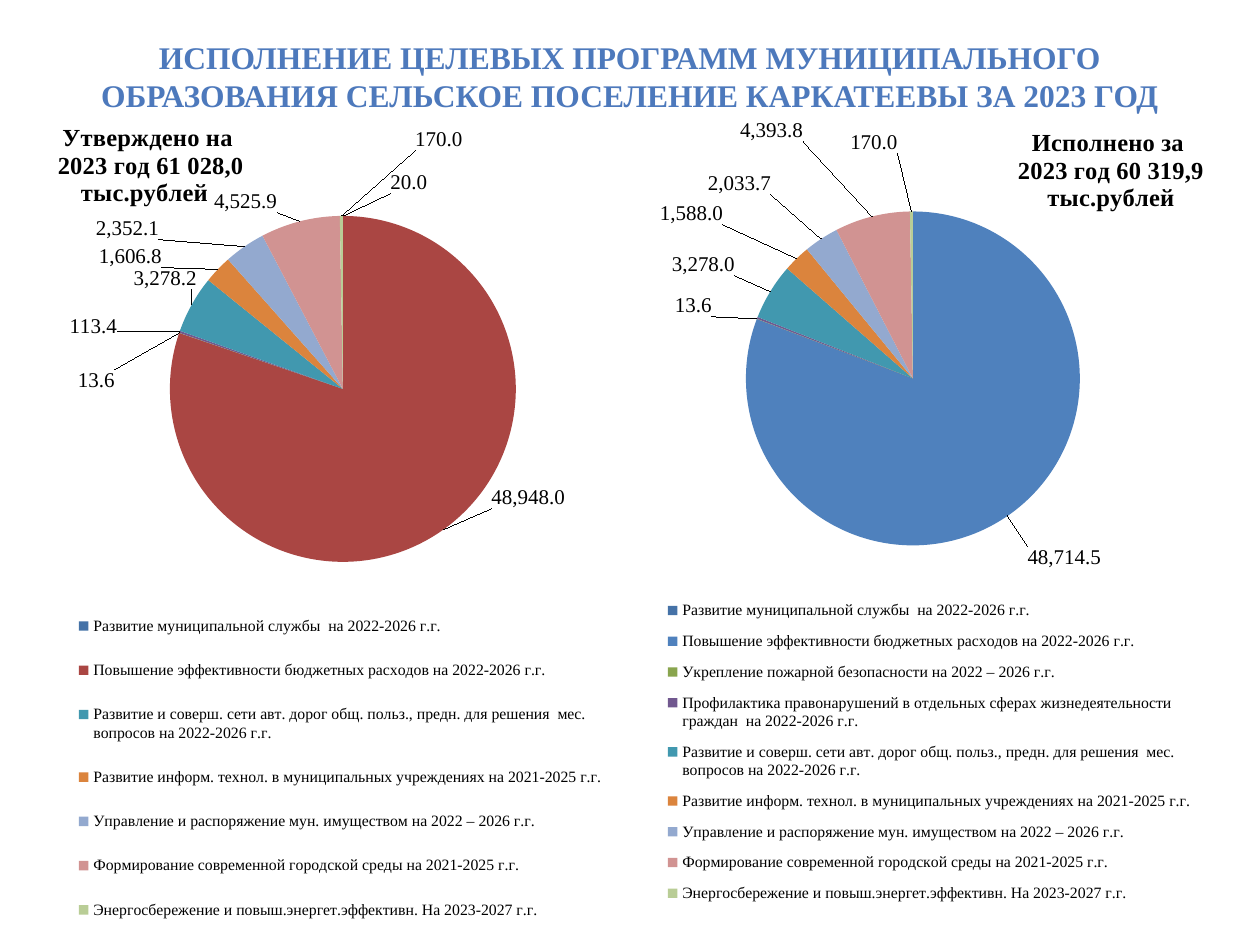
import math
from pptx import Presentation, util as u
from pptx.chart.data import CategoryChartData
from pptx.dml.color import RGBColor
from pptx.enum import chart as ch, text
from pptx.oxml import parse_xml
from pptx.oxml.ns import nsdecls, qn

PX = 914400 // 126
FONT = "Times New Roman"
LABEL_GAP = 7
CATEGORIES = [
    "Развитие муниципальной службы  на 2022-2026 г.г.",
    "Повышение эффективности бюджетных расходов на 2022-2026 г.г.",
    "Укрепление пожарной безопасности на 2022 – 2026 г.г.",
    "Профилактика правонарушений в отдельных сферах жизнедеятельности граждан  на 2022-2026 г.г.",
    "Развитие и соверш. сети авт. дорог общ. польз., предн. для решения  мес. вопросов на 2022-2026 г.г.",
    "Развитие информ. технол. в муниципальных учреждениях на 2021-2025 г.г.",
    "Управление и распоряжение мун. имуществом на 2022 – 2026 г.г.",
    "Формирование современной городской среды на 2021-2025 г.г.",
    "Энергосбережение и повыш.энергет.эффективн. На 2023-2027 г.г.",
]
COLOURS = ["4572A7", "AA4643", "89A54E", "71588F", "4198AF",
           "DB843D", "93A9CF", "D19392", "B9CD96"]

# Boxes are left, top, width, height in px; label centres are x, y in px
APPROVED = dict(
    box=(44, 98, 601, 847), plot=(162, 216, 362, 346), legend=(60, 591, 560, 354),
    title_at=(54, 118), title=["Утверждено на ", "2023 год 61 028,0", "тыс.рублей  "],
    values=[20, 48948, 13.6, 113.4, 3278.2, 1606.8, 2352.1, 4525.9, 170],
    centres=[(409, 182), (528, 498), (97, 380), (94, 326), (166, 278),
             (131, 256), (128, 228), (246, 201), (439, 139)],
    colours=COLOURS, hidden_entries=[2, 3])
EXECUTED = dict(
    box=(633, 88, 595, 837), plot=(746, 209, 334, 339), legend=(649, 589, 560, 326),
    title_at=(1008, 123), title=["Исполнено за", " 2023 год 60 319,9", " тыс.рублей"],
    values=[20, 48714.5, 13.6, 108.4, 3278, 1588, 2033.7, 4393.8, 170],
    centres=[None, (1064, 558), (694, 305), None, (704, 264),
             (692, 213), (740, 183), (772, 130), (874, 142)],
    colours=[COLOURS[0], "4F81BD"] + COLOURS[2:], hidden_entries=[])


def rgb(value):
    return RGBColor.from_string(value)


def style(font, size, colour="000000", bold=False):
    font.name, font.size, font.bold = FONT, u.Pt(size), bold
    font.color.rgb = rgb(colour)


def set_layout(parent, after, x, y, w=None, h=None, edge=True, inner=False):
    """Place a chart part by fractions of the chart, after the named child."""
    for old in parent.findall(qn("c:layout")):
        parent.remove(old)
    parts = ['<c:layoutTarget val="inner"/>'] if inner else []
    if edge:
        parts += ['<c:xMode val="edge"/><c:yMode val="edge"/>']
    for tag, value in zip("xywh", (x, y, w, h)):
        if value is not None:
            parts.append(f'<c:{tag} val="{value:.4f}"/>')
    layout = parse_xml(f'<c:layout {nsdecls("c")}><c:manualLayout>'
                       f'{"".join(parts)}</c:manualLayout></c:layout>')
    if after:
        parent.findall(qn(after))[-1].addnext(layout)
    else:
        parent.insert(0, layout)


def fractions(area, box):
    x, y, w, h = box
    return [(area[0] - x) / w, (area[1] - y) / h] + [
        size / whole for size, whole in zip(area[2:], (w, h))]


def default_centre(plot, values, i):
    """Centre of a label just outside the pie at the middle of its slice."""
    x, y, w, h = plot
    radius = min(w, h) / 2 + LABEL_GAP
    turn = 2 * math.pi * (sum(values[:i]) + values[i] / 2) / sum(values)
    dx, dy = math.sin(turn), -math.cos(turn)
    shown = f"{values[i]:,.1f}"
    width = sum(5 if c in ",." else 10.5 for c in shown)
    near_axis = math.sin(math.radians(5))
    side = 0 if abs(dx) <= near_axis else math.copysign(1, dx)
    rise = 0 if abs(dy) <= near_axis else math.copysign(1, dy)
    return (x + w / 2 + radius * dx + side * width / 2,
            y + h / 2 + radius * dy + rise * 12)


def add_labels(series, d):
    labels = series.data_labels
    labels.show_value = True
    labels.number_format, labels.number_format_is_linked = "#,##0.0", False
    labels.position = ch.XL_LABEL_POSITION.OUTSIDE_END
    style(labels.font, 12)
    for i, centre in enumerate(d["centres"]):
        label = series.points[i].data_label
        label.position = ch.XL_LABEL_POSITION.OUTSIDE_END
        element = labels._element.xpath(f'c:dLbl[c:idx/@val="{i}"]')[0]
        if centre is None:
            for child in list(element)[1:]:
                element.remove(child)
            element.append(parse_xml(f'<c:delete {nsdecls("c")} val="1"/>'))
            continue
        style(label.font, 12)
        start = default_centre(d["plot"], d["values"], i)
        offset = [(c - s) / size for c, s, size in zip(centre, start, d["box"][2:])]
        set_layout(element, "c:idx", *offset, edge=False)
        element.find(qn("c:layout")).addnext(parse_xml(
            f'<c:numFmt {nsdecls("c")} formatCode="#,##0.0" sourceLinked="0"/>'))


def add_chart_title(chart, d):
    chart.has_title = True
    tf = chart.chart_title.text_frame
    for i, line in enumerate(d["title"]):
        p = tf.paragraphs[0] if i == 0 else tf.add_paragraph()
        r = p.add_run()
        r.text = line
        style(r.font, 14, bold=True)
    set_layout(chart.chart_title._element, "c:tx", *fractions(d["title_at"], d["box"]))


def add_legend(chart, d):
    chart.has_legend = True
    legend = chart.legend
    legend.position = ch.XL_LEGEND_POSITION.BOTTOM
    legend.include_in_layout = False
    style(legend.font, 9)
    element = legend._element
    set_layout(element, "c:legendPos", *fractions(d["legend"], d["box"]))
    for i in d["hidden_entries"]:
        element.find(qn("c:layout")).addprevious(parse_xml(
            f'<c:legendEntry {nsdecls("c")}><c:idx val="{i}"/>'
            '<c:delete val="1"/></c:legendEntry>'))


def add_pie(s, d):
    data = CategoryChartData(number_format="#,##0.0")
    data.categories = CATEGORIES
    data.add_series("Series 1", d["values"])
    chart = s.shapes.add_chart(ch.XL_CHART_TYPE.PIE,
                               *(v * PX for v in d["box"]), data).chart
    style(chart.font, 18)
    plot = chart.plots[0]
    plot.vary_by_categories = True
    series = plot.series[0]
    for i, colour in enumerate(d["colours"]):
        fill = series.points[i].format.fill
        fill.solid()
        fill.fore_color.rgb = rgb(colour)
    add_labels(series, d)
    add_chart_title(chart, d)
    add_legend(chart, d)
    set_layout(chart._chartSpace.chart.plotArea, None,
               *fractions(d["plot"], d["box"]), inner=True)


def add_title(s):
    sp = s.shapes.title
    sp.left, sp.top, sp.width, sp.height = (v * PX for v in (63, 41, 1134, 107))
    tf = sp.text_frame
    tf.word_wrap = True
    tf.auto_size = text.MSO_AUTO_SIZE.NONE
    tf.vertical_anchor = text.MSO_ANCHOR.MIDDLE
    p = tf.paragraphs[0]
    p.alignment = text.PP_ALIGN.CENTER
    r = p.add_run()
    r.text = ("ИСПОЛНЕНИЕ ЦЕЛЕВЫХ ПРОГРАММ МУНИЦИПАЛЬНОГО ОБРАЗОВАНИЯ "
              "СЕЛЬСКОЕ ПОСЕЛЕНИЕ КАРКАТЕЕВЫ ЗА 2023 ГОД")
    style(r.font, 18, "4D79BC", bold=True)
    p.add_line_break()
    p.font.size = u.Pt(18)


def main():
    prs = Presentation()
    prs.slide_width, prs.slide_height = 1260 * PX, 945 * PX
    s = prs.slides.add_slide(prs.slide_layouts[5])
    add_title(s)
    # Approved budget on the left, executed budget on the right
    for d in (APPROVED, EXECUTED):
        add_pie(s, d)
    prs.save("out.pptx")


if __name__ == "__main__":
    main()
